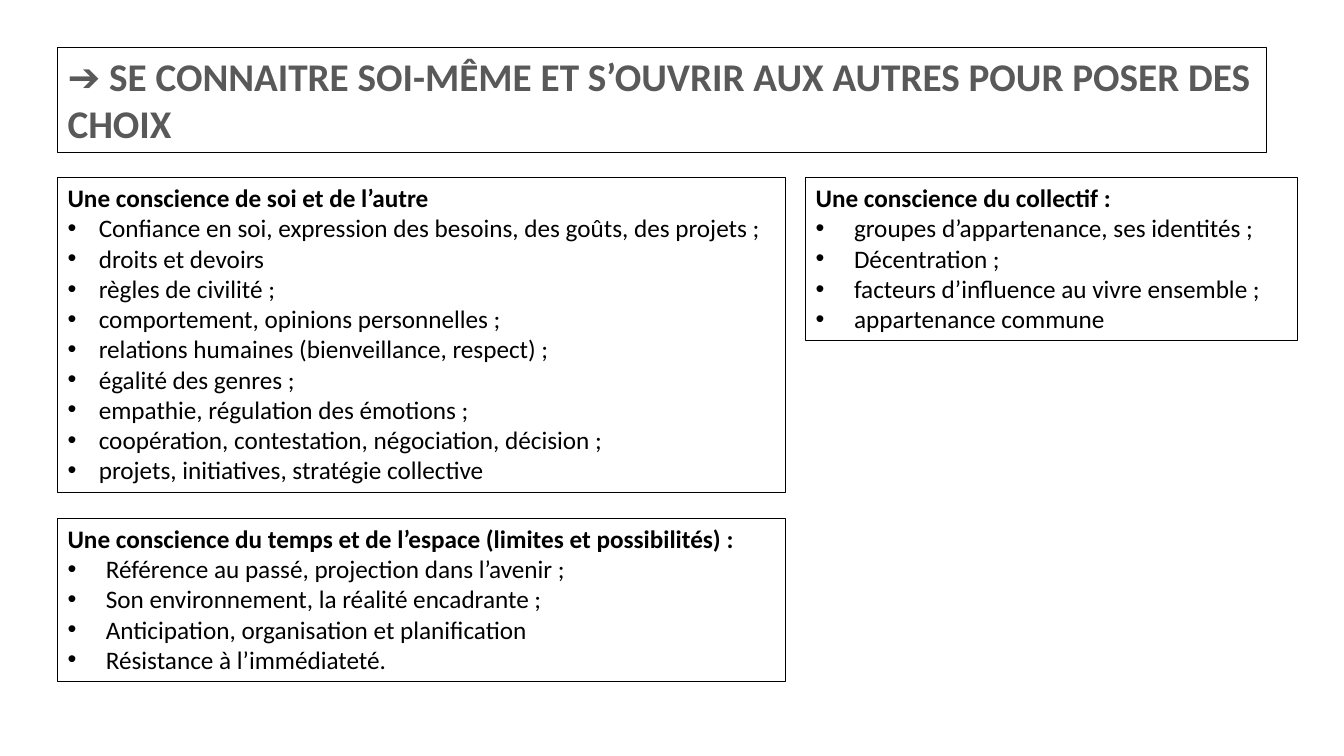
from lxml.etree import SubElement
from pptx import Presentation
from pptx.dml.color import RGBColor
from pptx.enum.text import MSO_ANCHOR, MSO_AUTO_SIZE, PP_ALIGN
from pptx.oxml.ns import qn
from pptx.util import Inches, Pt


def color(hex_value):
    return RGBColor.from_string(hex_value)


def format_box(box, left, top, width, height, lines, size, text_color, indent=0):
    """Frame a placeholder: bold first line, then bulleted lines."""
    box.left, box.top = Inches(left), Inches(top)
    box.width, box.height = Inches(width), Inches(height)
    box.fill.solid()
    box.fill.fore_color.rgb = color("FFFFFF")
    box.line.color.rgb = color("000000")
    box.line.width = Pt(0.75)
    frame = box.text_frame
    frame.word_wrap = True
    frame.auto_size = MSO_AUTO_SIZE.NONE
    frame.vertical_anchor = MSO_ANCHOR.TOP
    frame.text = "\n".join(lines)
    for number, paragraph in enumerate(frame.paragraphs):
        paragraph.alignment = PP_ALIGN.LEFT
        paragraph.space_before = Pt(0)
        margin = Inches(indent) if number else 0
        properties = paragraph._p.get_or_add_pPr()
        properties.set("marL", str(margin))
        properties.set("indent", str(-margin))
        if number:
            SubElement(properties, qn("a:buFont")).set("typeface", "Arial")
            SubElement(properties, qn("a:buChar")).set("char", "•")
        else:
            SubElement(properties, qn("a:buNone"))
        paragraph.font.name = "Calibri"
        paragraph.font.size = Pt(size)
        paragraph.font.bold = number == 0
        paragraph.font.color.rgb = color(text_color)


deck = Presentation()
deck.slide_width, deck.slide_height = Inches(13.33), Inches(7.5)
page = deck.slides.add_slide(deck.slide_layouts.get_by_name("Comparison"))

# Title
format_box(page.shapes.title, 0.57, 0.47, 11.99, 1.04,
           ["➔ SE CONNAITRE SOI-MÊME ET S’OUVRIR AUX AUTRES POUR POSER DES CHOIX"],
           28, "595959")

# Themes: left, top, width, height, bullet indent, lines
themes = [
    (0.57, 1.76, 7.22, 3.13, 0.31, [
        "Une conscience de soi et de l’autre",
        "Confiance en soi, expression des besoins, des goûts, des projets ;",
        "droits et devoirs",
        "règles de civilité ;",
        "comportement, opinions personnelles ;",
        "relations humaines (bienveillance, respect) ;",
        "égalité des genres ;",
        "empathie, régulation des émotions ;",
        "coopération, contestation, négociation, décision ;",
        "projets, initiatives, stratégie collective",
    ]),
    (0.57, 5.14, 7.22, 1.62, 0.38, [
        "Une conscience du temps et de l’espace (limites et possibilités) :",
        "Référence au passé, projection dans l’avenir ;",
        "Son environnement, la réalité encadrante ;",
        "Anticipation, organisation et planification",
        "Résistance à l’immédiateté.",
    ]),
    (7.99, 1.76, 4.88, 1.62, 0.38, [
        "Une conscience du collectif :",
        "groupes d’appartenance, ses identités ;",
        "Décentration ;",
        "facteurs d’influence au vivre ensemble ;",
        "appartenance commune",
    ]),
]
bodies = [box for box in page.placeholders if box != page.shapes.title]
for box, (left, top, width, height, indent, lines) in zip(bodies, themes):
    format_box(box, left, top, width, height, lines, 18, "000000", indent)

# Remove the unused placeholder
for box in bodies[len(themes):]:
    box.element.getparent().remove(box.element)

deck.save("out.pptx")
